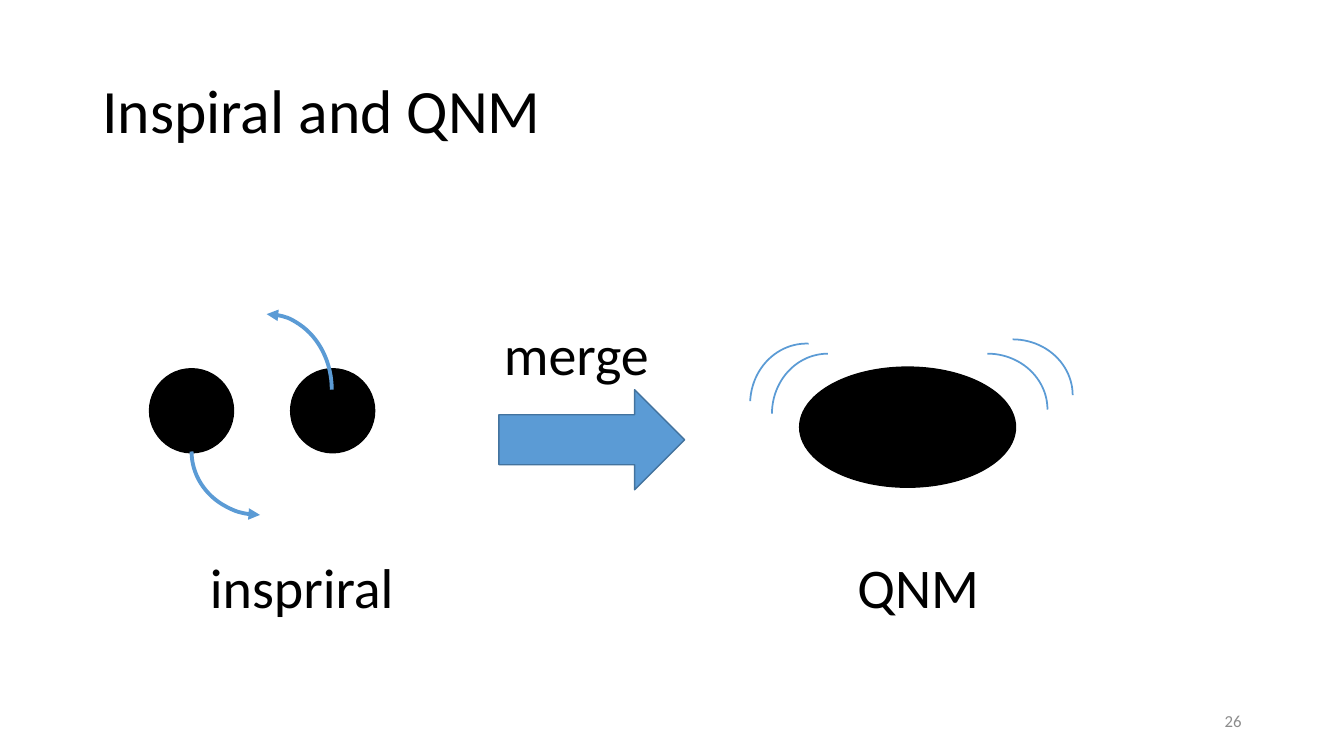
from lxml.etree import SubElement
from pptx import Presentation
from pptx.dml.color import RGBColor
from pptx.enum.shapes import MSO_SHAPE as Shape
from pptx.enum.text import MSO_ANCHOR as Anchor, PP_ALIGN as Align
from pptx.oxml.ns import qn
from pptx.util import Emu, Pt

BLACK = RGBColor(0x00, 0x00, 0x00)
BLUE = RGBColor(0x5B, 0x9B, 0xD5)
DARK_BLUE = RGBColor(0x43, 0x73, 0x9E)
GRAY = RGBColor(0x8C, 0x8C, 0x8C)
COLUMNS, ROWS = 16, 9


class Board:
    """Draws on one slide, with lengths in columns and rows of the grid."""

    font = "Calibri"

    def __init__(self, deck):
        self.column = deck.slide_width / COLUMNS
        self.row = deck.slide_height / ROWS
        self.slide = deck.slides.add_slide(deck.slide_layouts[5])

    def box(self, left, top, width, height):
        return (Emu(round(left * self.column)), Emu(round(top * self.row)),
                Emu(round(width * self.column)), Emu(round(height * self.row)))

    def set_text(self, frame, text, size, color=BLACK, align=Align.LEFT, anchor=Anchor.TOP):
        frame.text = text
        frame.word_wrap = True
        frame.vertical_anchor = anchor
        paragraph = frame.paragraphs[0]
        paragraph.alignment = align
        font = paragraph.runs[0].font
        font.name, font.size, font.color.rgb = self.font, Pt(size), color

    def title(self, text, *place):
        heading = self.slide.shapes.title
        heading.left, heading.top, heading.width, heading.height = self.box(*place)
        self.set_text(heading.text_frame, text, 44, anchor=Anchor.MIDDLE)
        heading.text_frame.paragraphs[0].line_spacing = 0.9

    def label(self, text, *place, size=40, **style):
        caption = self.slide.shapes.add_textbox(*self.box(*place))
        self.set_text(caption.text_frame, text, size, **style)

    def solid(self, kind, *place, fill=BLACK, line=BLACK):
        body = self.slide.shapes.add_shape(kind, *self.box(*place))
        body.shadow.inherit = False
        body.fill.solid()
        body.fill.fore_color.rgb = fill
        body.line.color.rgb = line
        body.line.width = Pt(1)

    def arc(self, *place, turn=0, weight=1.25, arrow=False):
        curve = self.slide.shapes.add_shape(Shape.ARC, *self.box(*place))
        curve.shadow.inherit = False
        curve.rotation = turn
        curve.fill.background()
        curve.line.color.rgb = BLUE
        curve.line.width = Pt(weight)
        if arrow:
            outline = curve.element.spPr.find(qn("a:ln"))
            SubElement(outline, qn("a:headEnd"), type="triangle")


def main():
    deck = Presentation()
    deck.slide_width, deck.slide_height = Emu(12192000), Emu(6858000)
    board = Board(deck)

    # Title and page number
    board.title("Inspiral and QNM", 1.1, 0.48, 13.8, 1.74)
    board.label("26", 11.3, 8.34, 3.6, 0.48, size=12, color=GRAY,
                align=Align.RIGHT, anchor=Anchor.MIDDLE)

    # Two black holes circling each other
    for hole in range(2):
        board.solid(Shape.OVAL, 1.78 + 1.68 * hole, 4.39, 1, 1)
    board.arc(2.4, 3.74, 1.55, 1.8, weight=2.75, arrow=True)
    board.arc(2.28, 4.62, 1.63, 1.51, turn=180, weight=2.75, arrow=True)
    board.label("inspriral", 2.38, 6.52, 2.98, 0.92)

    # Merger
    board.solid(Shape.OVAL, 9.52, 4.37, 2.57, 1.43)
    board.solid(Shape.RIGHT_ARROW, 5.94, 4.64, 2.21, 1.19, fill=BLUE, line=DARK_BLUE)
    board.label("merge", 5.88, 3.74, 2.51, 0.92)

    # Ringing of the merged hole
    for left, top, turn in ((11.04, 4.21, 0), (11.34, 4.04, 0),
                            (9.14, 4.26, 270), (8.88, 4.14, 272.6)):
        board.arc(left, top, 1.43, 1.33, turn=turn)
    board.label("QNM", 10.09, 6.52, 3.68, 0.92)

    deck.save("out.pptx")


if __name__ == "__main__":
    main()
